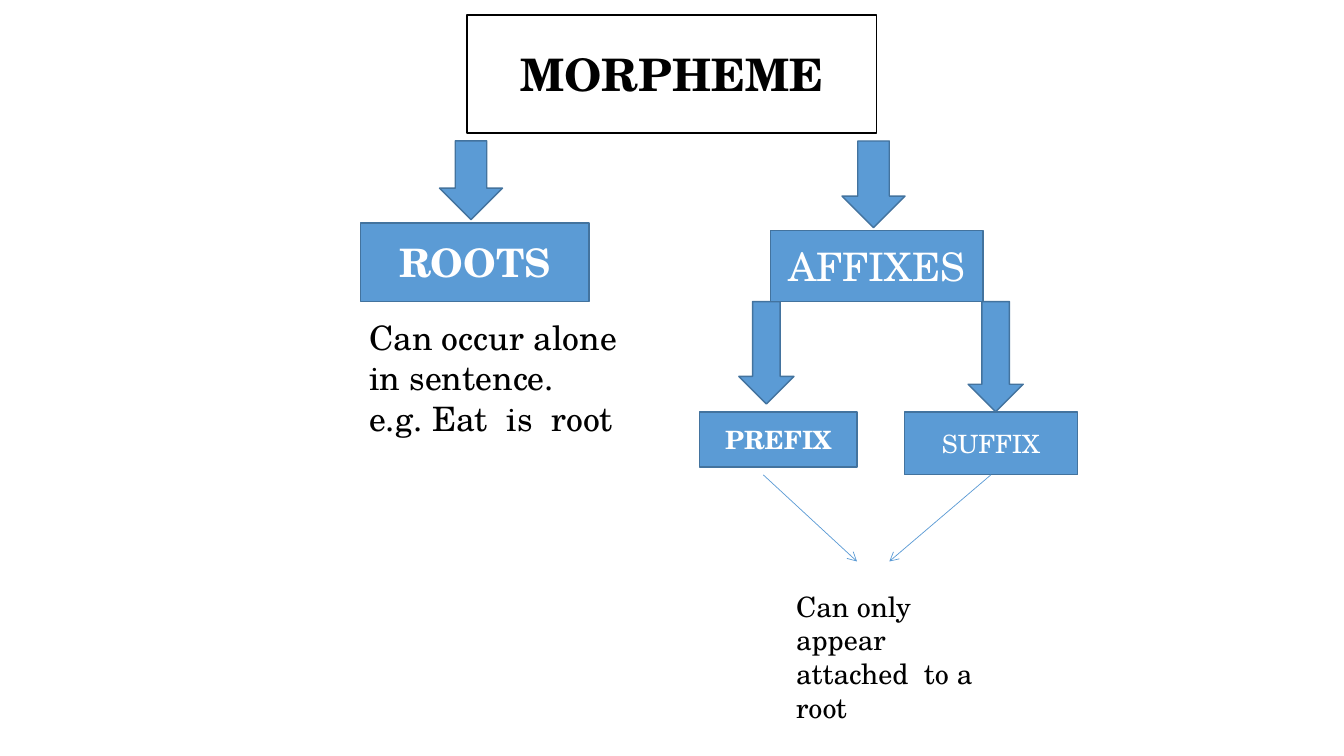
from typing import NamedTuple

from lxml import etree
from pptx import Presentation
from pptx import util as u
from pptx.dml.color import RGBColor
from pptx.enum import shapes, text
from pptx.oxml import ns

ROWS = 96
FONT = "TeX Gyre Schola"
BLUE, EDGE, WHITE, BLACK = "5B9BD5", "43739E", "FFFFFF", "000000"


class Area(NamedTuple):
    column: float
    row: float
    columns: float
    rows: float


class Node(NamedTuple):
    area: Area
    label: str
    size: int
    bold: bool = False
    fill: str = BLUE
    line: str = EDGE
    ink: str = WHITE


class Note(NamedTuple):
    area: Area
    wording: str
    size: int


class Pointer(NamedTuple):
    start_column: float
    end_column: float


NODES = [
    Node(Area(59.3, 1.9, 52, 15), "MORPHEME", 32, True, WHITE, BLACK, BLACK),
    Node(Area(45.8, 28.3, 29, 10), "ROOTS", 28, True),
    Node(Area(97.8, 29.3, 27, 9), "AFFIXES", 28),
    Node(Area(88.8, 52.3, 20, 7), "PREFIX", 18, True),
    Node(Area(114.8, 52.3, 22, 8), "SUFFIX", 18),
]
BLOCK_ARROWS = [
    Area(55.8, 17.9, 8, 10),
    Area(106.9, 17.9, 8, 11),
    Area(93.8, 38.3, 7, 13),
    Area(122.9, 38.3, 7, 14),
]
NOTES = [
    Note(Area(45.6, 39.6, 36.3, 16.8), "Can occur alone in sentence.\ne.g. Eat  is  root", 24),
    Note(Area(99.8, 74.2, 29, 18.6), "Can only appear attached  to a root", 20),
]
POINTER_TOP, POINTER_BOTTOM = 60.3, 71.3
POINTERS = [Pointer(96.9, 108.8), Pointer(125.8, 112.9)]

deck = Presentation()
deck.slide_width, deck.slide_height = u.Inches(13.33), u.Inches(7.5)
page = deck.slides.add_slide(deck.slide_layouts[6])


def grid(units: float) -> int:
    return round(units * deck.slide_height / ROWS)


def colour(value: str) -> RGBColor:
    return RGBColor.from_string(value)


def write(box, wording: str, size: int, ink: str, bold: bool = False) -> None:
    box.text_frame.text = wording
    box.text_frame.word_wrap = True
    for para in box.text_frame.paragraphs:
        for span in para.runs:
            span.font.name = FONT
            span.font.size = u.Pt(size)
            span.font.bold = bold
            span.font.color.rgb = colour(ink)


def draw_shape(kind: shapes.MSO_SHAPE, area: Area, fill: str = BLUE, line: str = EDGE):
    box = page.shapes.add_shape(kind, *map(grid, area))
    box.shadow.inherit = False
    box.fill.solid()
    box.fill.fore_color.rgb = colour(fill)
    box.line.color.rgb = colour(line)
    box.line.width = u.Pt(1)
    return box


def draw_node(node: Node) -> None:
    box = draw_shape(shapes.MSO_SHAPE.RECTANGLE, node.area, node.fill, node.line)
    write(box, node.label, node.size, node.ink, node.bold)
    box.text_frame.vertical_anchor = text.MSO_ANCHOR.MIDDLE
    box.text_frame.paragraphs[0].alignment = text.PP_ALIGN.CENTER


def draw_note(note: Note) -> None:
    box = page.shapes.add_textbox(*map(grid, note.area))
    write(box, note.wording, note.size, BLACK)
    box.text_frame.auto_size = text.MSO_AUTO_SIZE.SHAPE_TO_FIT_TEXT


def draw_pointer(pointer: Pointer) -> None:
    ends = (pointer.start_column, POINTER_TOP, pointer.end_column, POINTER_BOTTOM)
    link = page.shapes.add_connector(shapes.MSO_CONNECTOR.STRAIGHT, *map(grid, ends))
    link.line.color.rgb = colour(BLUE)
    link.line.width = u.Pt(0.5)
    etree.SubElement(link.line._get_or_add_ln(), ns.qn("a:tailEnd"), type="arrow")
    etree.SubElement(link._element.spPr, ns.qn("a:effectLst"))


def main() -> None:
    for area in BLOCK_ARROWS:
        draw_shape(shapes.MSO_SHAPE.DOWN_ARROW, area)
    for node in NODES:
        draw_node(node)
    for note in NOTES:
        draw_note(note)
    for pointer in POINTERS:
        draw_pointer(pointer)
    deck.save("out.pptx")


if __name__ == "__main__":
    main()
